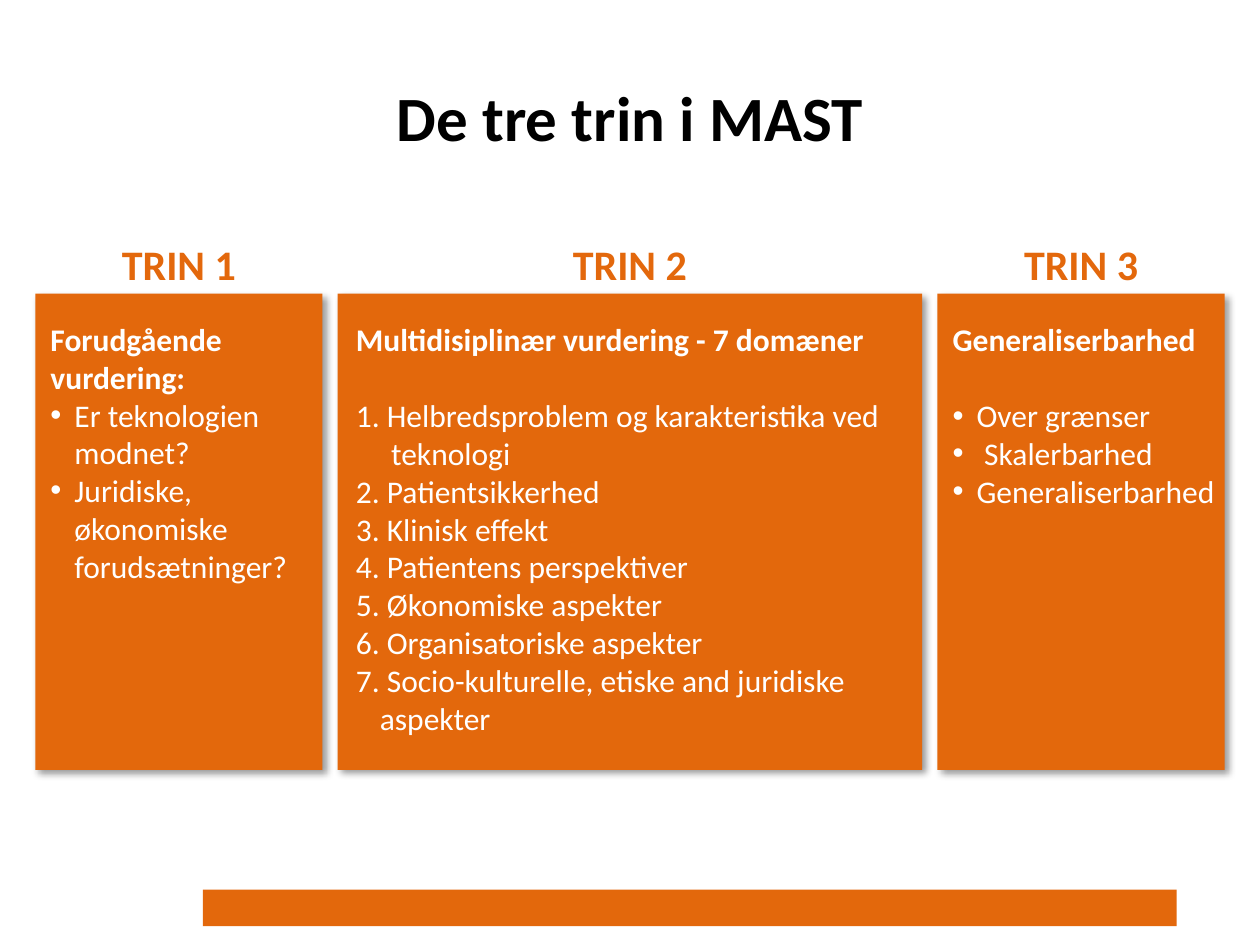
from lxml import etree
from pptx import Presentation
from pptx.dml.color import RGBColor
from pptx.enum.shapes import MSO_SHAPE
from pptx.enum.text import MSO_ANCHOR, PP_ALIGN
from pptx.oxml.ns import qn
from pptx.util import Inches, Pt

RECT = MSO_SHAPE.RECTANGLE
MIDDLE, TOP = MSO_ANCHOR.MIDDLE, MSO_ANCHOR.TOP
CENTER, LEFT = PP_ALIGN.CENTER, PP_ALIGN.LEFT
ORANGE = RGBColor(0xE3, 0x68, 0x0C)
WHITE = RGBColor(0xFF, 0xFF, 0xFF)
BLACK = RGBColor(0, 0, 0)
FONT = "Calibri"

MARGIN, GAP = 0.28, 0.12
PANEL_TOP, PANEL_HEIGHT = 2.33, 3.78
HANG = 0.19
LINE_GAP = 22

# fields: text, style, space before
STEPS = [
    ("TRIN 1", 2.28, [
        ("Forudgående", "head", 0),
        ("vurdering:", "head", 0),
        ("Er teknologien modnet?", "bullet", 0),
        ("Juridiske, økonomiske forudsætninger?", "bullet", 0),
    ]),
    ("TRIN 2", 4.64, [
        ("Multidisiplinær vurdering - 7 domæner", "head", 0),
        ("1. Helbredsproblem og karakteristika ved", "item", LINE_GAP),
        ("teknologi", "continued", 0),
        ("2. Patientsikkerhed", "item", 0),
        ("3. Klinisk effekt", "item", 0),
        ("4. Patientens perspektiver", "item", 0),
        ("5. Økonomiske aspekter", "item", 0),
        ("6. Organisatoriske aspekter", "item", 0),
        ("7. Socio-kulturelle, etiske and juridiske aspekter", "item", 0),
    ]),
    ("TRIN 3", 2.28, [
        ("Generaliserbarhed", "head", 0),
        ("Over grænser", "bullet", LINE_GAP),
        ("Skalerbarhed", "wide bullet", 0),
        ("Generaliserbarhed", "bullet", 0),
    ]),
]
INDENTS = {
    "head": (HANG, -HANG),
    "item": (HANG, -HANG),
    "bullet": (HANG, -HANG),
    "wide bullet": (0.25, -0.25),
    "continued": (0.28, 0),
}


def add_bar(slide, x, y, w, h):
    sp = slide.shapes.add_shape(RECT, Inches(x), Inches(y), Inches(w), Inches(h))
    sp.shadow.inherit = False
    sp.fill.solid()
    sp.fill.fore_color.rgb = ORANGE
    sp.line.fill.background()
    return sp


def add_shadow(sp):
    effects = sp._element.spPr.find(qn("a:effectLst"))
    shadow = etree.SubElement(effects, qn("a:outerShdw"), blurRad=str(Pt(4)),
                              dist=str(Pt(3)), dir="2700000", algn="tl", rotWithShape="0")
    color = etree.SubElement(shadow, qn("a:srgbClr"), val="000000")
    etree.SubElement(color, qn("a:alpha"), val="40000")


def add_frame(slide, x, y, w, h, anchor=TOP):
    tf = slide.shapes.add_textbox(Inches(x), Inches(y), Inches(w), Inches(h)).text_frame
    tf.word_wrap = True
    tf.vertical_anchor = anchor
    return tf


def write(p, text, size, color, bold, align=LEFT):
    p.alignment = align
    r = p.add_run()
    r.text = text
    r.font.name = FONT
    r.font.size = Pt(size)
    r.font.bold = bold
    r.font.color.rgb = color


def set_indent(p, style):
    pPr = p._p.get_or_add_pPr()
    left, first = INDENTS[style]
    pPr.set("marL", str(Inches(left)))
    pPr.set("indent", str(Inches(first)))
    if "bullet" in style:
        etree.SubElement(pPr, qn("a:buFont"), typeface="Arial")
        etree.SubElement(pPr, qn("a:buChar"), char="•")
    else:
        etree.SubElement(pPr, qn("a:buNone"))


def add_title(slide, x, y, w, h):
    tf = add_frame(slide, x, y, w, h, MIDDLE)
    write(tf.paragraphs[0], "De tre trin i MAST", 36, BLACK, True, CENTER)


def add_step(slide, x, y, w, h, label, lines):
    add_shadow(add_bar(slide, x, y, w, h))
    tf = add_frame(slide, x + 0.01 * w, y + 0.16, w + 0.09, h - 0.32)
    for i, (text, style, before) in enumerate(lines):
        p = tf.paragraphs[0] if i == 0 else tf.add_paragraph()
        set_indent(p, style)
        if before:
            p.space_before = Pt(before)
        write(p, text, 18, WHITE, style == "head")
    tf = add_frame(slide, x, y - 0.49, w, 0.5)
    write(tf.paragraphs[0], label, 24, ORANGE, True, CENTER)


def main():
    prs = Presentation()
    prs.slide_width, prs.slide_height = Inches(10), Inches(7.5)
    slide = prs.slides.add_slide(prs.slide_layouts[6])
    add_bar(slide, 1.61, 7.06, 7.73, 0.29)
    add_title(slide, 0.5, 0.3, 9, 1.25)
    x = MARGIN
    for label, width, lines in STEPS:
        add_step(slide, x, PANEL_TOP, width, PANEL_HEIGHT, label, lines)
        x += width + GAP
    prs.save("out.pptx")


if __name__ == "__main__":
    main()
